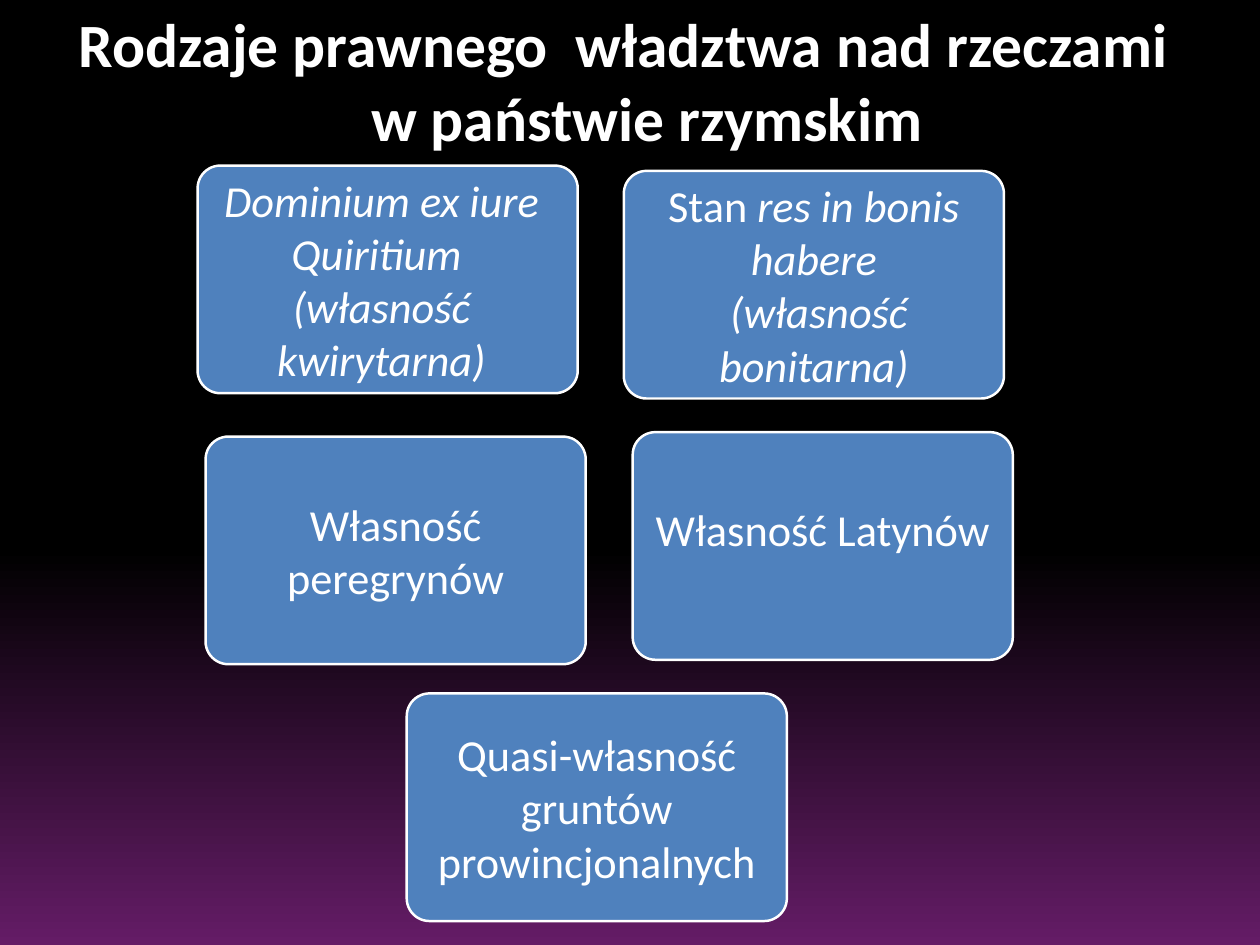
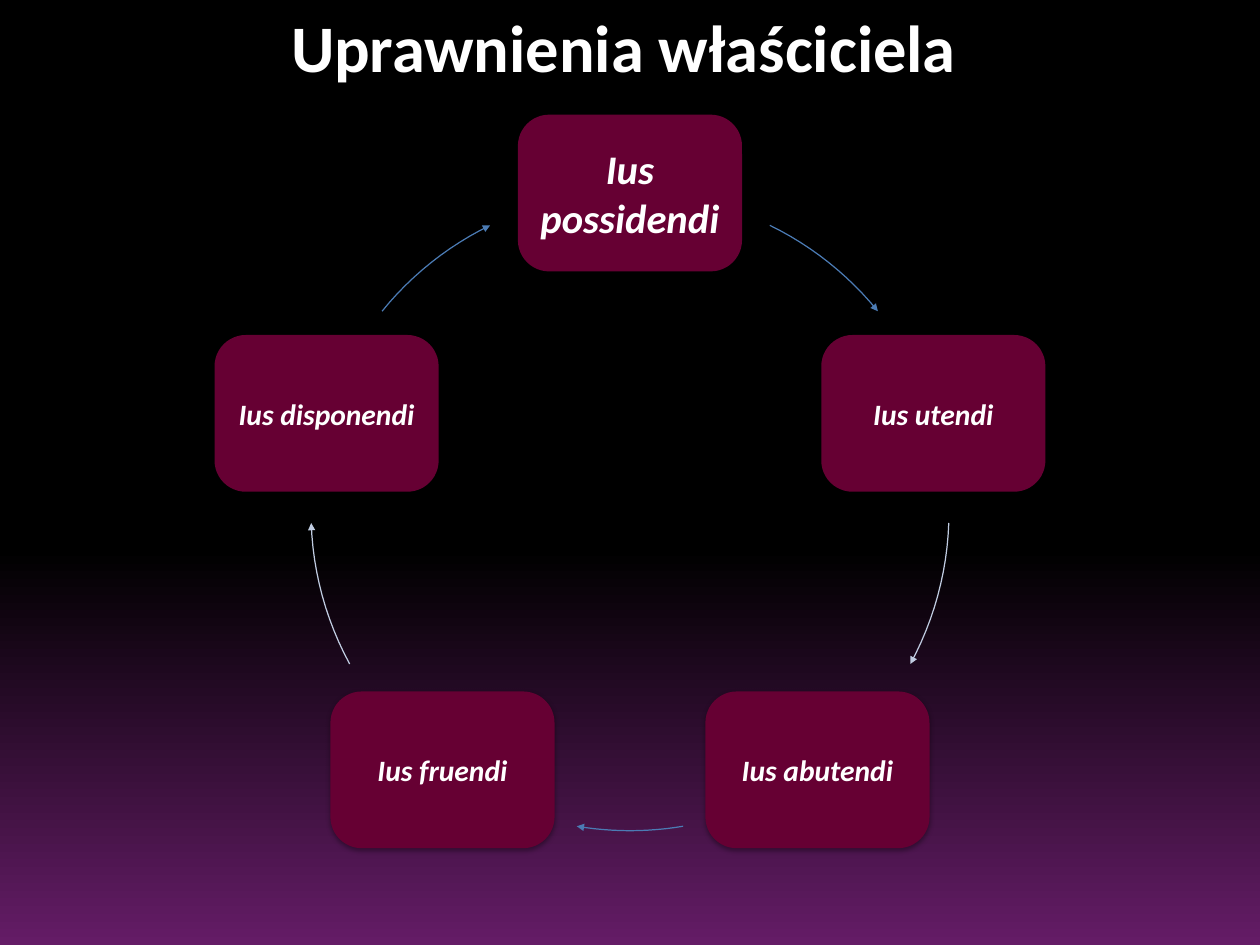
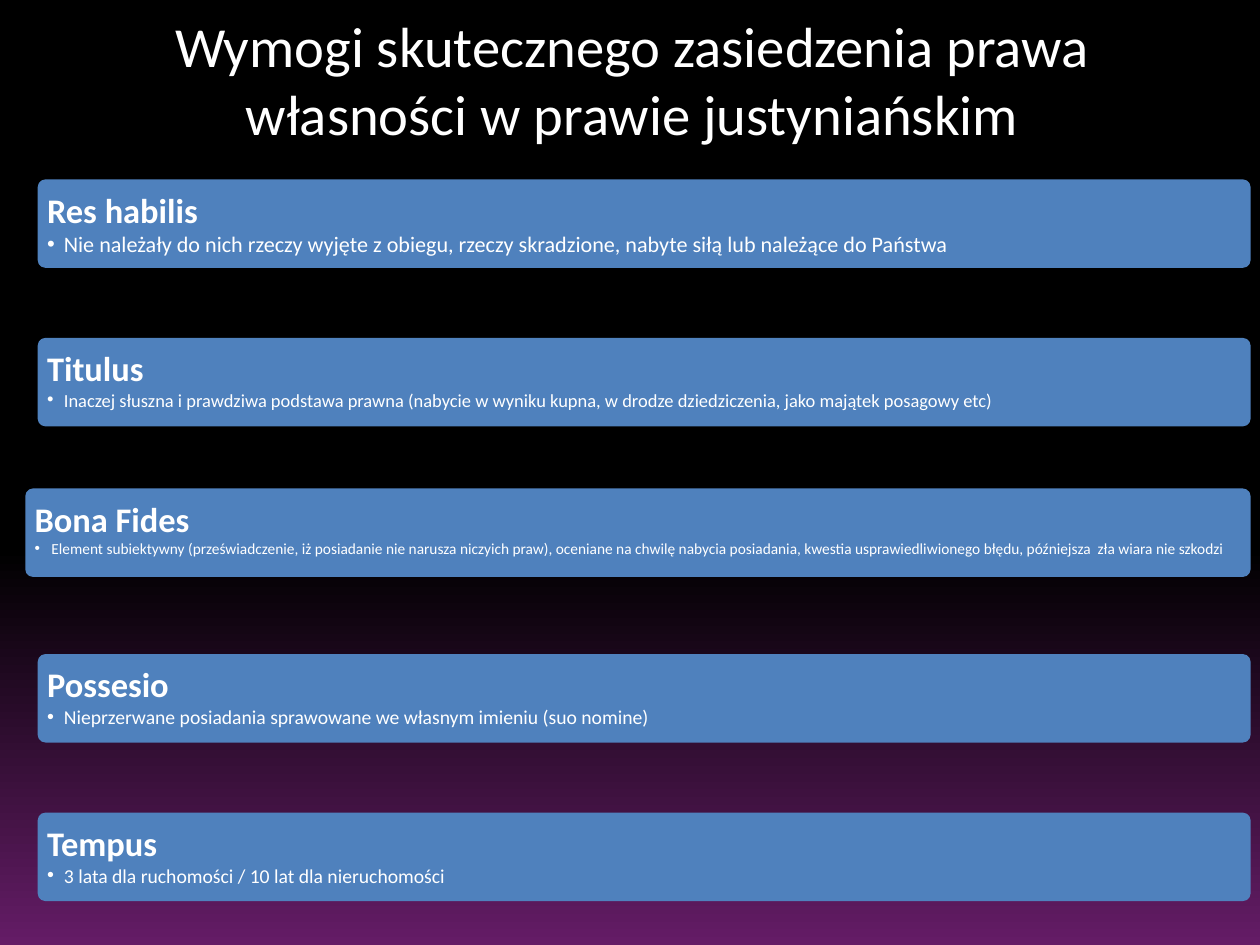
from math import cos, radians, sin

from lxml import etree
from pptx import Presentation
from pptx.dml.color import RGBColor
from pptx.enum.shapes import MSO_SHAPE
from pptx.enum.text import MSO_ANCHOR, PP_ALIGN
from pptx.oxml.ns import qn
from pptx.util import Inches, Pt

BLACK = RGBColor(0x00, 0x00, 0x00)
PURPLE = RGBColor(0x64, 0x1C, 0x66)
WHITE = RGBColor(0xFF, 0xFF, 0xFF)
BLUE = RGBColor(0x4F, 0x81, 0xBD)
MAROON = RGBColor(0x66, 0x00, 0x33)
ARROW_BLUE = RGBColor(0x4B, 0x7B, 0xB4)
ARROW_PALE = RGBColor(0xC0, 0xCC, 0xE1)
FONT = "Calibri"
INSET = 0.07


def add_xml(parent, tag, **attributes):
    return etree.SubElement(
        parent, qn(tag), {name: str(value) for name, value in attributes.items()}
    )


class Slides:
    """Holds the shared style and the slide being filled."""

    def __init__(self, width, height):
        self.deck = Presentation()
        self.deck.slide_width = Inches(width)
        self.deck.slide_height = Inches(height)
        self.slide = None
        fill = self.deck.slide_master.background.fill
        fill.gradient()
        fill.gradient_angle = 270
        for stop, position, color in zip(fill.gradient_stops, (0.58, 1), (BLACK, PURPLE)):
            stop.position = position
            stop.color.rgb = color

    def start(self):
        self.slide = self.deck.slides.add_slide(self.deck.slide_layouts[6])

    def add_text(self, shape, paragraphs, align, anchor, **margins):
        """Fill a shape with paragraphs, each a list of (text, font values)."""
        frame = shape.text_frame
        values = {"word_wrap": True, "vertical_anchor": anchor}
        for side in ("left", "top", "right", "bottom"):
            values[f"margin_{side}"] = Inches(margins.get(side, INSET))
        for name, value in values.items():
            setattr(frame, name, value)
        for index, spans in enumerate(paragraphs):
            para = frame.add_paragraph() if index else frame.paragraphs[0]
            para.alignment = align
            for text, style in spans:
                span = para.add_run()
                span.text = text
                for name, value in {"name": FONT, **style}.items():
                    setattr(span.font, name, value)
                span.font.color.rgb = WHITE
        return frame.paragraphs

    def hang(self, para, indent, bullet=None):
        properties = para._p.get_or_add_pPr()
        properties.set("marL", str(Inches(indent)))
        properties.set("indent", str(-Inches(indent)))
        if bullet:
            add_xml(properties, "a:buFont", typeface="Arial")
            add_xml(properties, "a:buChar", char=bullet)

    def title(self, text, size, place, anchor=MSO_ANCHOR.TOP, bold=True, indent=0):
        box = self.slide.shapes.add_textbox(*map(Inches, place))
        style = {"size": Pt(size), "bold": bold}
        paras = self.add_text(box, [[(text, style)]], PP_ALIGN.CENTER, anchor)
        if indent:
            self.hang(paras[0], indent)

    def card(self, place, paragraphs, fill, corner, line=None,
             align=PP_ALIGN.CENTER, anchor=MSO_ANCHOR.MIDDLE, **margins):
        """Add a rounded rectangle with text; return the shape."""
        card = self.slide.shapes.add_shape(
            MSO_SHAPE.ROUNDED_RECTANGLE, *map(Inches, place))
        card.adjustments[0] = corner
        card.shadow.inherit = False
        card.fill.solid()
        card.fill.fore_color.rgb = fill
        if line is None:
            card.line.fill.background()
        else:
            card.line.color.rgb = line
            card.line.width = Pt(2)
        self.add_text(card, paragraphs, align, anchor, **margins)
        return card

    def drop_shadow(self, shape):
        effects = shape._element.spPr.find(qn("a:effectLst"))
        shadow = add_xml(effects, "a:outerShdw", blurRad=Pt(4), dist=Pt(2),
                         dir=90 * 60000, rotWithShape=0)
        color = add_xml(shadow, "a:srgbClr", val=BLACK)
        add_xml(color, "a:alpha", val=35000)

    def arc_arrow(self, points, color):
        first, *rest = [tuple(map(Inches, point)) for point in points]
        builder = self.slide.shapes.build_freeform(*first)
        builder.add_line_segments(rest, close=False)
        arrow = builder.convert_to_shape()
        arrow.shadow.inherit = False
        arrow.fill.background()
        arrow.line.color.rgb = color
        arrow.line.width = Pt(1)
        add_xml(arrow._element.spPr.find(qn("a:ln")), "a:tailEnd", type="triangle")


def ownership_kinds(slides):
    slides.start()
    slides.title("Rodzaje prawnego  władztwa nad rzeczami w państwie rzymskim", 50,
                 (0.56, 0, 12.96, 10.67), indent=0.53)
    plain = {"size": Pt(36)}
    italic = {**plain, "italic": True}
    cards = [
        (2.23, 1.87, [[("Dominium ex iure Quiritium ", italic)],
                      [("(własność kwirytarna)", italic)]], {"right": 0.21}),
        (7.04, 1.93, [[("Stan ", plain), ("res in bonis habere", italic)],
                      [(" (własność bonitarna)", italic)]], {}),
        (2.32, 4.93, [[("Własność peregrynów", plain)]], {}),
        (7.14, 4.88, [[("Własność Latynów", plain)]], {"bottom": 0.39}),
        (4.59, 7.83, [[("Quasi-własność gruntów prowincjonalnych", plain)]], {}),
    ]
    for left, top, paragraphs, margins in cards:
        slides.card((left, top, 4.29, 2.57), paragraphs, BLUE, 0.1, WHITE,
                    **{"top": 0, "bottom": 0, **margins})


def owner_rights(slides):
    slides.start()
    slides.title("Uprawnienia właściciela", 54, (0.56, 0, 12.96, 9.93), indent=0.53)
    center_x, center_y, radius = 7.11, 5.78, 3.6
    width, height = 2.53, 1.77

    def on_circle(degrees):
        """Point on the cycle, measured clockwise from the top."""
        angle = radians(degrees)
        return center_x + radius * sin(angle), center_y - radius * cos(angle)

    rights = [("Ius possidendi", 33), ("Ius utendi", 24), ("Ius abutendi", 24),
              ("Ius fruendi", 24), ("Ius disponendi", 24)]
    for index, (name, size) in enumerate(rights):
        x, y = on_circle(index * 360 / len(rights))
        style = {"size": Pt(size), "bold": True, "italic": True}
        card = slides.card((x - width / 2, y - height / 2, width, height),
                           [[(name, style)]], MAROON, 0.2)
        slides.drop_shadow(card)

    arcs = [(26, 51, ARROW_BLUE), (92, 118.5, ARROW_PALE), (170.4, 189.6, ARROW_BLUE),
            (241.5, 268, ARROW_PALE), (309, 334, ARROW_BLUE)]
    steps = 12
    for start, end, color in arcs:
        points = [on_circle(start + (end - start) * step / steps)
                  for step in range(steps + 1)]
        slides.arc_arrow(points, color)


def prescription_requirements(slides):
    slides.start()
    slides.title("Wymogi skutecznego zasiedzenia prawa własności w prawie justyniańskim",
                 46, (0.73, 0, 12.8, 1.78), MSO_ANCHOR.MIDDLE, bold=False)
    right_edge = 14.1
    bars = [
        (0.44, 2.04, "Res habilis", 18,
         "Nie należały do nich rzeczy wyjęte z obiegu, rzeczy skradzione, "
         "nabyte siłą lub należące do Państwa"),
        (0.44, 3.83, "Titulus", 15,
         "Inaczej słuszna i prawdziwa podstawa prawna (nabycie w wyniku kupna, "
         "w drodze dziedziczenia, jako majątek posagowy etc)"),
        (0.3, 5.53, "Bona Fides", 12.5,
         "Element subiektywny (przeświadczenie, iż posiadanie nie narusza niczyich praw), "
         "oceniane na chwilę nabycia posiadania, kwestia usprawiedliwionego błędu, "
         "późniejsza  zła wiara nie szkodzi"),
        (0.44, 7.4, "Possesio", 16,
         "Nieprzerwane posiadania sprawowane we własnym imieniu (suo nomine)"),
        (0.44, 9.19, "Tempus", 16, "3 lata dla ruchomości / 10 lat dla nieruchomości"),
    ]
    for left, top, heading, size, detail in bars:
        paragraphs = [[(heading, {"size": Pt(28), "bold": True})],
                      [(detail, {"size": Pt(size)})]]
        bar = slides.card((left, top, right_edge - left, 0.97), paragraphs, BLUE, 0.075,
                          BLUE, PP_ALIGN.LEFT, MSO_ANCHOR.TOP)
        slides.hang(bar.text_frame.paragraphs[1], 0.19, "•")


def main():
    slides = Slides(14.22, 10.67)
    ownership_kinds(slides)
    owner_rights(slides)
    prescription_requirements(slides)
    slides.deck.save("out.pptx")


if __name__ == "__main__":
    main()
